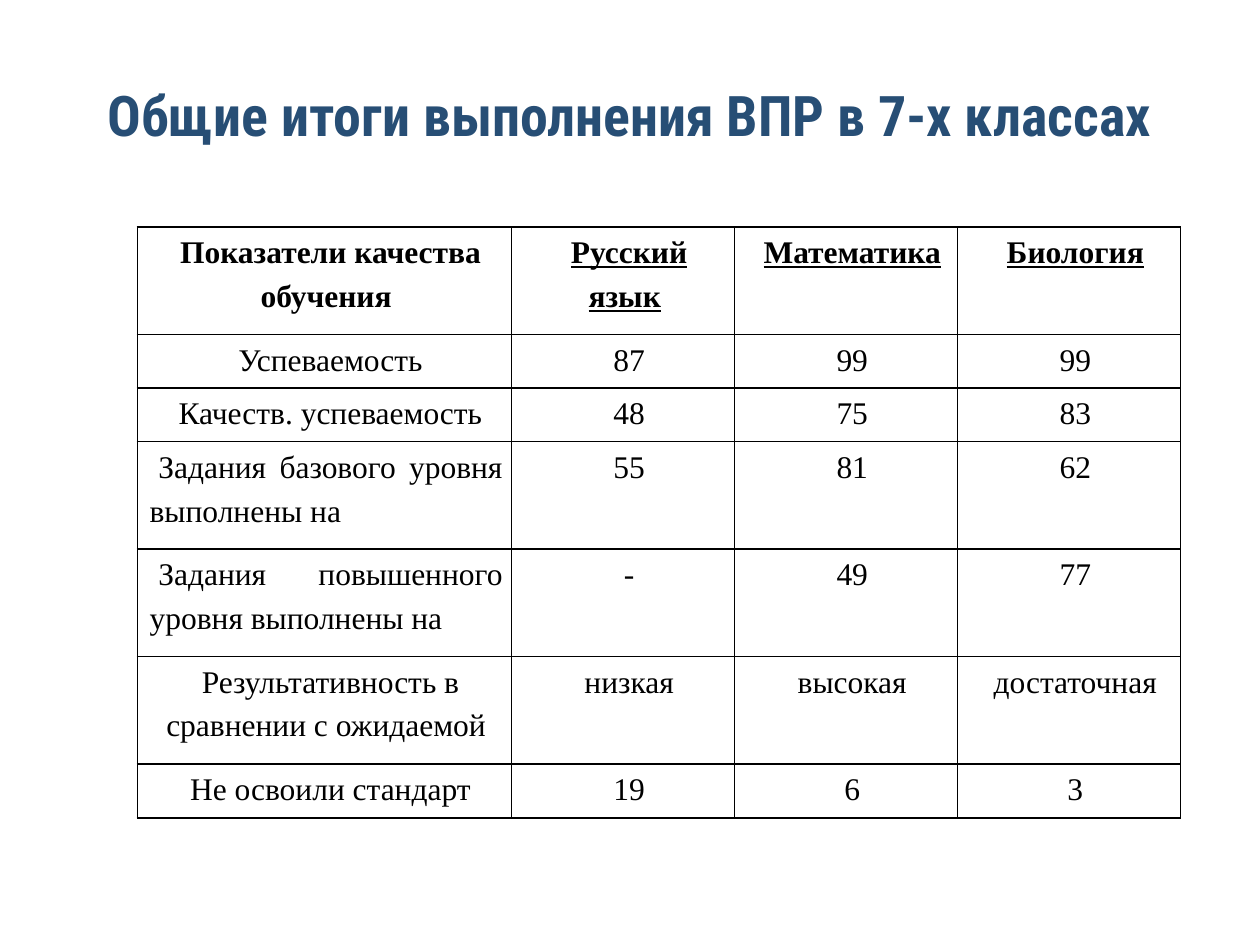
"""Build the slide with the overall seventh-grade test results table."""
from lxml.etree import SubElement
from pptx import Presentation
from pptx.dml.color import RGBColor
from pptx.enum.text import MSO_ANCHOR, PP_ALIGN
from pptx.oxml.ns import qn
from pptx.util import Pt

NAVY = RGBColor(0x27, 0x4E, 0x75)
BLACK = RGBColor(0, 0, 0)
WHITE = RGBColor(255, 255, 255)
COLUMN_WIDTHS = [213.8, 127.5, 127.5, 127.5]
ROW_HEIGHTS = [61.4, 30.7, 30.7, 61.4, 61.4, 61.4, 30.7]
JUSTIFIED_ROWS = (3, 4)
RESULTS = [
    ["Показатели качества обучения", "Русский язык", "Математика", "Биология"],
    ["Успеваемость", "87", "99", "99"],
    ["Качеств. успеваемость", "48", "75", "83"],
    ["Задания базового уровня выполнены на", "55", "81", "62"],
    ["Задания повышенного уровня выполнены на", "-", "49", "77"],
    ["Результативность в сравнении с ожидаемой", "низкая", "высокая", "достаточная"],
    ["Не освоили стандарт", "19", "6", "3"],
]


def add_run(paragraph, text, font_name, size, color, bold):
    run = paragraph.add_run()
    run.text = text
    run.font.name = font_name
    run.font.size = Pt(size)
    run.font.color.rgb = color
    run.font.bold = bold
    return run


def add_borders(cell):
    properties = cell._tc.get_or_add_tcPr()
    for position, side in enumerate(("a:lnL", "a:lnR", "a:lnT", "a:lnB")):
        line = SubElement(properties, qn(side), w=str(Pt(1)))
        fill = SubElement(line, qn("a:solidFill"))
        SubElement(fill, qn("a:srgbClr"), val=str(BLACK))
        properties.remove(line)
        properties.insert(position, line)


presentation = Presentation()
presentation.slide_width = Pt(720)
presentation.slide_height = Pt(540)
slide = presentation.slides.add_slide(presentation.slide_layouts[6])

title = slide.shapes.add_textbox(Pt(0), Pt(44), Pt(720), Pt(42))
title_frame = title.text_frame
title_frame.word_wrap = True
title_frame.vertical_anchor = MSO_ANCHOR.MIDDLE
title_paragraph = title_frame.paragraphs[0]
title_paragraph.alignment = PP_ALIGN.CENTER
add_run(title_paragraph, "Общие итоги выполнения ВПР в 7-х классах",
        "Roboto Condensed", 32, NAVY, True)

table = slide.shapes.add_table(
    len(RESULTS), len(COLUMN_WIDTHS), Pt(78.5), Pt(129.6),
    Pt(sum(COLUMN_WIDTHS)), Pt(sum(ROW_HEIGHTS))).table
table.first_row = False
table.horz_banding = False
for column, width in zip(table.columns, COLUMN_WIDTHS):
    column.width = Pt(width)

for row_index, texts in enumerate(RESULTS):
    table.rows[row_index].height = Pt(ROW_HEIGHTS[row_index])
    is_header = row_index == 0
    for column_index, text in enumerate(texts):
        cell = table.cell(row_index, column_index)
        cell.fill.solid()
        cell.fill.fore_color.rgb = WHITE
        cell.margin_left = cell.margin_right = Pt(5)
        cell.margin_top = cell.margin_bottom = Pt(0)
        add_borders(cell)
        paragraph = cell.text_frame.paragraphs[0]
        is_justified = column_index == 0 and row_index in JUSTIFIED_ROWS
        paragraph.alignment = PP_ALIGN.JUSTIFY if is_justified else PP_ALIGN.CENTER
        paragraph.line_spacing = 1.25
        paragraph_properties = paragraph._p.get_or_add_pPr()
        paragraph_properties.set("marL", str(Pt(2)))
        paragraph_properties.set("indent", str(Pt(5)))
        run = add_run(paragraph, text, "Times New Roman", 18, BLACK, is_header)
        run.font.underline = is_header and column_index > 0

presentation.save("out.pptx")
